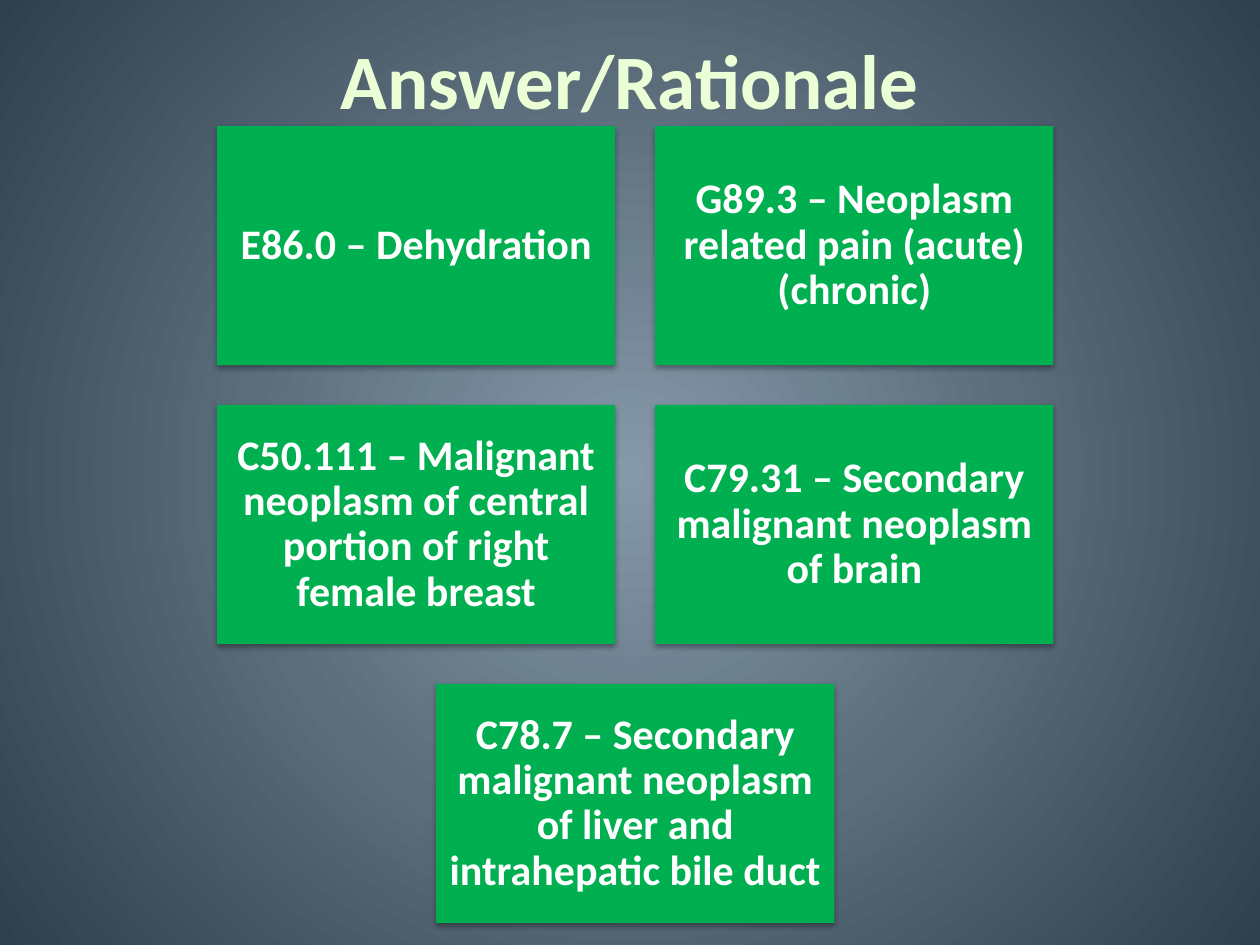
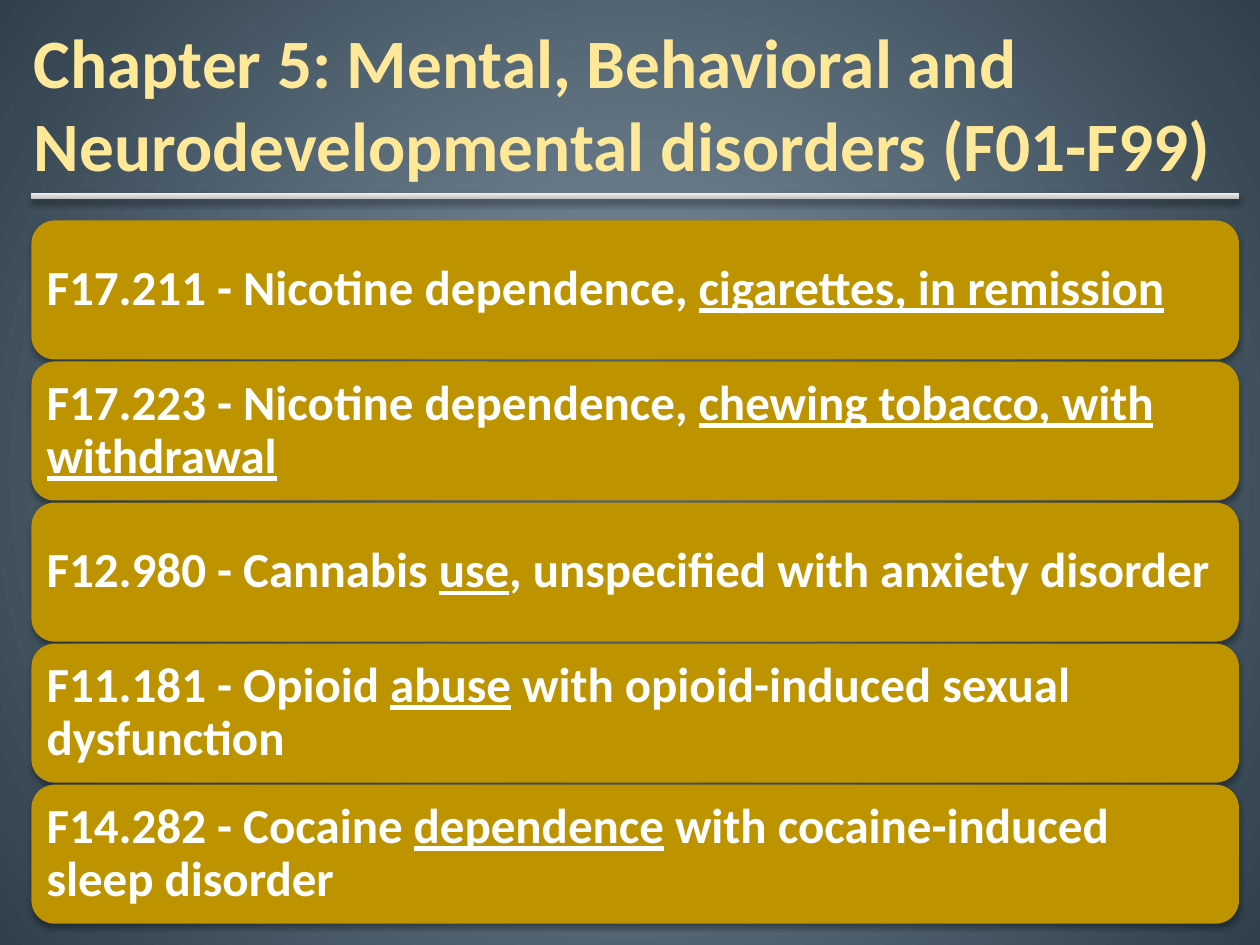
from dataclasses import dataclass

from lxml import etree
from pptx import Presentation
from pptx.dml.color import RGBColor
from pptx.enum.shapes import MSO_SHAPE
from pptx.enum.text import MSO_ANCHOR, MSO_AUTO_SIZE, PP_ALIGN
from pptx.oxml.ns import qn
from pptx.util import Pt

RECT, ROUND_RECT = MSO_SHAPE.RECTANGLE, MSO_SHAPE.ROUNDED_RECTANGLE
LEFT, CENTER = PP_ALIGN.LEFT, PP_ALIGN.CENTER
MIDDLE = MSO_ANCHOR.MIDDLE
NO_AUTOFIT = MSO_AUTO_SIZE.NONE

FONT = "Calibri"
WHITE = RGBColor(0xFF, 0xFF, 0xFF)
BLACK = RGBColor(0x00, 0x00, 0x00)
GREEN = RGBColor(0x00, 0xB0, 0x50)
GOLD = RGBColor(0xBD, 0x94, 0x00)
PALE_GREEN = RGBColor(0xEA, 0xFF, 0xD6)
PALE_YELLOW = RGBColor(0xFF, 0xE8, 0x98)
BACKGROUND_STOPS = [(0, RGBColor(0x86, 0x99, 0xA9)), (100, RGBColor(0x2F, 0x3F, 0x4B))]
RULE_STOPS = [(0, RGBColor(0xBD, 0xBD, 0xBD)), (35, RGBColor(0xD1, 0xD1, 0xD1)),
              (100, RGBColor(0xEE, 0xEE, 0xEE))]

SLIDE_W, SLIDE_H = 720, 540
TITLE_ONLY = 5


@dataclass
class Box:
    left: float
    top: float
    width: float
    height: float

    def lengths(self) -> list:
        return [Pt(v) for v in (self.left, self.top, self.width, self.height)]


@dataclass
class CardStyle:
    shape: int
    fill: RGBColor
    size: float
    align: int
    inset: float


@dataclass
class Code:
    text: str
    underlined: str = ""


TILE = CardStyle(RECT, GREEN, 24, CENTER, 7.2)
BAR = CardStyle(ROUND_RECT, GOLD, 28, LEFT, 4.8)

ANSWERS = [
    Code("E86.0 – Dehydration"),
    Code("G89.3 – Neoplasm related pain (acute) (chronic)"),
    Code("C50.111 – Malignant neoplasm of central portion of right female breast"),
    Code("C79.31 – Secondary malignant neoplasm of brain"),
    Code("C78.7 – Secondary malignant neoplasm of liver and intrahepatic bile duct"),
]
DISORDERS = [
    Code("F17.211 - Nicotine dependence, cigarettes, in remission", "cigarettes, in remission"),
    Code("F17.223 - Nicotine dependence, chewing tobacco, with withdrawal",
         "chewing tobacco, with withdrawal"),
    Code("F12.980 - Cannabis use, unspecified with anxiety disorder", "use"),
    Code("F11.181 - Opioid abuse with opioid-induced sexual dysfunction", "abuse"),
    Code("F14.282 - Cocaine dependence with cocaine-induced sleep disorder", "dependence"),
]


def set_stops(element, stops: list) -> None:
    """Replace the colour stops of the gradient inside element."""
    gs_lst = element.xpath(".//a:gsLst")[0]
    for gs in list(gs_lst):
        gs_lst.remove(gs)
    for percent, color in stops:
        gs = etree.SubElement(gs_lst, qn("a:gs"), pos=str(percent * 1000))
        etree.SubElement(gs, qn("a:srgbClr"), val=str(color))


def set_background(master) -> None:
    """Give every slide a gradient that darkens outwards from the centre."""
    master.background.fill.gradient()
    bg = master.element.xpath("./p:cSld/p:bg")[0]
    set_stops(bg, BACKGROUND_STOPS)
    lin = bg.xpath(".//a:lin")[0]
    grad = lin.getparent()
    grad.remove(lin)
    circle = etree.SubElement(grad, qn("a:path"), path="circle")
    etree.SubElement(circle, qn("a:fillToRect"), l="50000", t="50000", r="50000", b="50000")


def add_shadow(sp, opacity: int, blur: float, distance: float) -> None:
    """Drop a black shadow straight down."""
    sp.shadow.inherit = False
    effects = sp.element.spPr.find(qn("a:effectLst"))
    shadow = etree.SubElement(effects, qn("a:outerShdw"), blurRad=str(Pt(blur)),
                              dist=str(Pt(distance)), dir="5400000", rotWithShape="0")
    color = etree.SubElement(shadow, qn("a:srgbClr"), val=str(BLACK))
    etree.SubElement(color, qn("a:alpha"), val=str(opacity * 1000))


def format_run(r, size: float, color: RGBColor) -> None:
    r.font.name = FONT
    r.font.size = Pt(size)
    r.font.bold = True
    r.font.color.rgb = color


def set_title(slide, text: str, box: Box, size: float, color: RGBColor, align: int) -> None:
    title = slide.shapes.title
    title.left, title.top, title.width, title.height = box.lengths()
    tf = title.text_frame
    tf.text = text
    tf.auto_size = NO_AUTOFIT
    tf.vertical_anchor = MIDDLE
    p = tf.paragraphs[0]
    p.alignment = align
    format_run(p.runs[0], size, color)


def add_card(slide, code: Code, box: Box, style: CardStyle) -> None:
    sp = slide.shapes.add_shape(style.shape, *box.lengths())
    sp.fill.solid()
    sp.fill.fore_color.rgb = style.fill
    sp.line.fill.background()
    add_shadow(sp, 35, 3.1, 1.8)

    tf = sp.text_frame
    tf.word_wrap = True
    tf.vertical_anchor = MIDDLE
    tf.margin_left = tf.margin_right = tf.margin_top = tf.margin_bottom = Pt(style.inset)
    p = tf.paragraphs[0]
    p.alignment = style.align
    p.line_spacing = 0.9
    parts = code.text.partition(code.underlined) if code.underlined else [code.text]
    for part in filter(None, parts):
        r = p.add_run()
        r.text = part
        format_run(r, style.size, WHITE)
        if part == code.underlined:
            r.font.underline = True


def add_rule(slide, box: Box) -> None:
    sp = slide.shapes.add_shape(RECT, *box.lengths())
    sp.fill.gradient()
    sp.fill.gradient_angle = 90
    set_stops(sp.element.spPr, RULE_STOPS)
    sp.line.fill.background()
    add_shadow(sp, 32, 3.5, 2.2)


def build_answers(slide) -> None:
    set_title(slide, "Answer/Rationale", Box(36, 0, 648, 90), 44, PALE_GREEN, CENTER)
    columns, width, height, gap = 2, 227.6, 136.6, 22.8
    center, top = 363, 72
    for i, code in enumerate(ANSWERS):
        row, column = divmod(i, columns)
        in_row = min(columns, len(ANSWERS) - row * columns)
        row_width = in_row * (width + gap) - gap
        left = center - row_width / 2 + column * (width + gap)
        add_card(slide, code, Box(left, top + row * (height + gap), width, height), TILE)


def build_disorders(slide) -> None:
    set_title(slide, "Chapter 5: Mental, Behavioral and Neurodevelopmental disorders (F01-F99)",
              Box(12.2, -5.8, 707.8, 128.2), 39.6, PALE_YELLOW, LEFT)
    left, width = 18, 690
    add_rule(slide, Box(left, 110.2, width, 3.6))
    top, height, pitch = 126, 79.4, 80.6
    for i, code in enumerate(DISORDERS):
        add_card(slide, code, Box(left, top + i * pitch, width, height), BAR)


def main() -> None:
    prs = Presentation()
    prs.slide_width, prs.slide_height = Pt(SLIDE_W), Pt(SLIDE_H)
    set_background(prs.slide_master)
    for build in (build_answers, build_disorders):
        build(prs.slides.add_slide(prs.slide_layouts[TITLE_ONLY]))
    prs.save("out.pptx")


if __name__ == "__main__":
    main()
